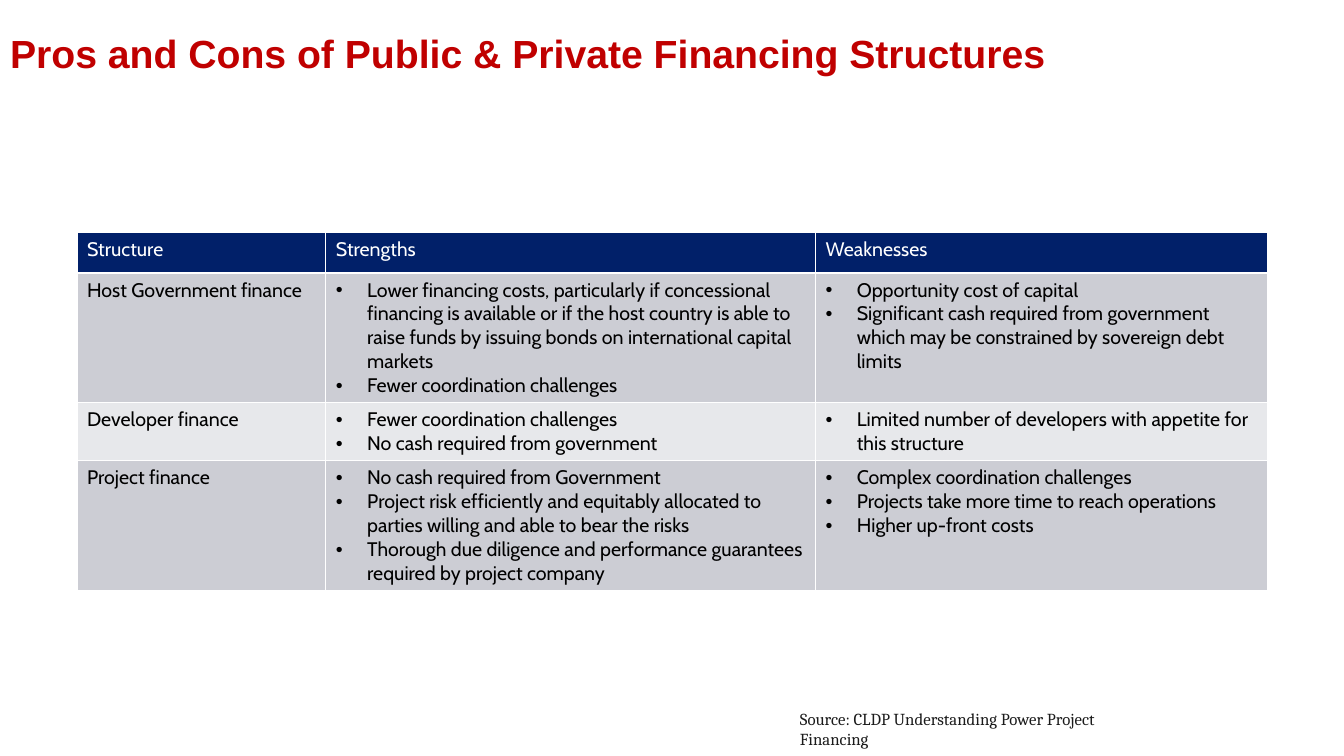
from lxml.etree import SubElement
from pptx import Presentation
from pptx.dml.color import RGBColor
from pptx.enum.text import MSO_ANCHOR, PP_ALIGN
from pptx.oxml.ns import qn
from pptx.util import Cm, Pt

RED = RGBColor(0xC0, 0x00, 0x00)
NAVY = RGBColor(0x01, 0x20, 0x69)
WHITE = RGBColor(0xFF, 0xFF, 0xFF)
BLACK = RGBColor(0x00, 0x00, 0x00)
CHARCOAL = RGBColor(0x1B, 0x1B, 0x1B)
BANDS = [RGBColor(0xCC, 0xCD, 0xD4), RGBColor(0xE7, 0xE8, 0xEB)]

TITLE = "Pros and Cons of Public & Private Financing Structures"
SOURCE = "Source: CLDP Understanding Power Project Financing"
HEADERS = ["Structure", "Strengths", "Weaknesses"]
STRUCTURES = [
    ("Host Government finance",
     ["Lower financing costs, particularly if concessional financing is available or if "
      "the host country is able to raise funds by issuing bonds on international capital markets",
      "Fewer coordination challenges"],
     ["Opportunity cost of capital",
      "Significant cash required from government which may be constrained by sovereign debt limits"]),
    ("Developer finance",
     ["Fewer coordination challenges", "No cash required from government"],
     ["Limited number of developers with appetite for this structure"]),
    ("Project finance",
     ["No cash required from Government",
      "Project risk efficiently and equitably allocated to parties willing and able to bear the risks",
      "Thorough due diligence and performance guarantees required by project company"],
     ["Complex coordination challenges",
      "Projects take more time to reach operations",
      "Higher up-front costs"]),
]
COL_WIDTHS = [6.27, 12.34, 11.4]
ROW_HEIGHTS = [1.03, 3.26, 1.47, 3.26]

TITLE_FONT = {"name": "Arial", "size": Pt(28), "bold": True}
TABLE_FONT = {"name": "Cabin", "size": Pt(14), "bold": False}
SOURCE_FONT = {"name": "Cambria", "size": Pt(12), "bold": False}


def write(p, text, font, color):
    r = p.add_run()
    r.text = text
    for key, value in font.items():
        setattr(r.font, key, value)
    r.font.color.rgb = color


def add_bullet(p):
    pPr = p._p.get_or_add_pPr()
    pPr.set("marL", str(Cm(0.79)))
    pPr.set("indent", str(-Cm(0.79)))
    SubElement(pPr, qn("a:buFont"), typeface="Arial")
    SubElement(pPr, qn("a:buChar"), char="•")


def fill_cell(cell, content, fill, color):
    cell.fill.solid()
    cell.fill.fore_color.rgb = fill
    tf = cell.text_frame
    bulleted = isinstance(content, list)
    for i, line in enumerate(content if bulleted else [content]):
        p = tf.add_paragraph() if i else tf.paragraphs[0]
        if bulleted:
            add_bullet(p)
        write(p, line, TABLE_FONT, color)


def main():
    prs = Presentation()
    prs.slide_width, prs.slide_height = Cm(33.87), Cm(19.05)
    s = prs.slides.add_slide(prs.slide_layouts[5])

    title = s.shapes.title
    title.left, title.top, title.width, title.height = Cm(0), Cm(0.74), Cm(31.09), Cm(2.21)
    tf = title.text_frame
    tf.vertical_anchor = MSO_ANCHOR.TOP
    p = tf.paragraphs[0]
    p.alignment = PP_ALIGN.LEFT
    p.line_spacing = 0.9
    write(p, TITLE, TITLE_FONT, RED)

    rows = [HEADERS] + STRUCTURES
    table = s.shapes.add_table(len(rows), len(HEADERS), Cm(1.94), Cm(5.85),
                               Cm(sum(COL_WIDTHS)), Cm(sum(ROW_HEIGHTS))).table
    for col, width in zip(table.columns, COL_WIDTHS):
        col.width = Cm(width)
    for i, (row, height, contents) in enumerate(zip(table.rows, ROW_HEIGHTS, rows)):
        row.height = Cm(height)
        fill, color = (BANDS[(i - 1) % 2], BLACK) if i else (NAVY, WHITE)
        for cell, content in zip(row.cells, contents):
            fill_cell(cell, content, fill, color)

    box = s.shapes.add_textbox(Cm(19.91), Cm(17.73), Cm(9.6), Cm(0.77))
    tf = box.text_frame
    tf.word_wrap = True
    write(tf.paragraphs[0], SOURCE, SOURCE_FONT, CHARCOAL)

    prs.save("out.pptx")


if __name__ == "__main__":
    main()
